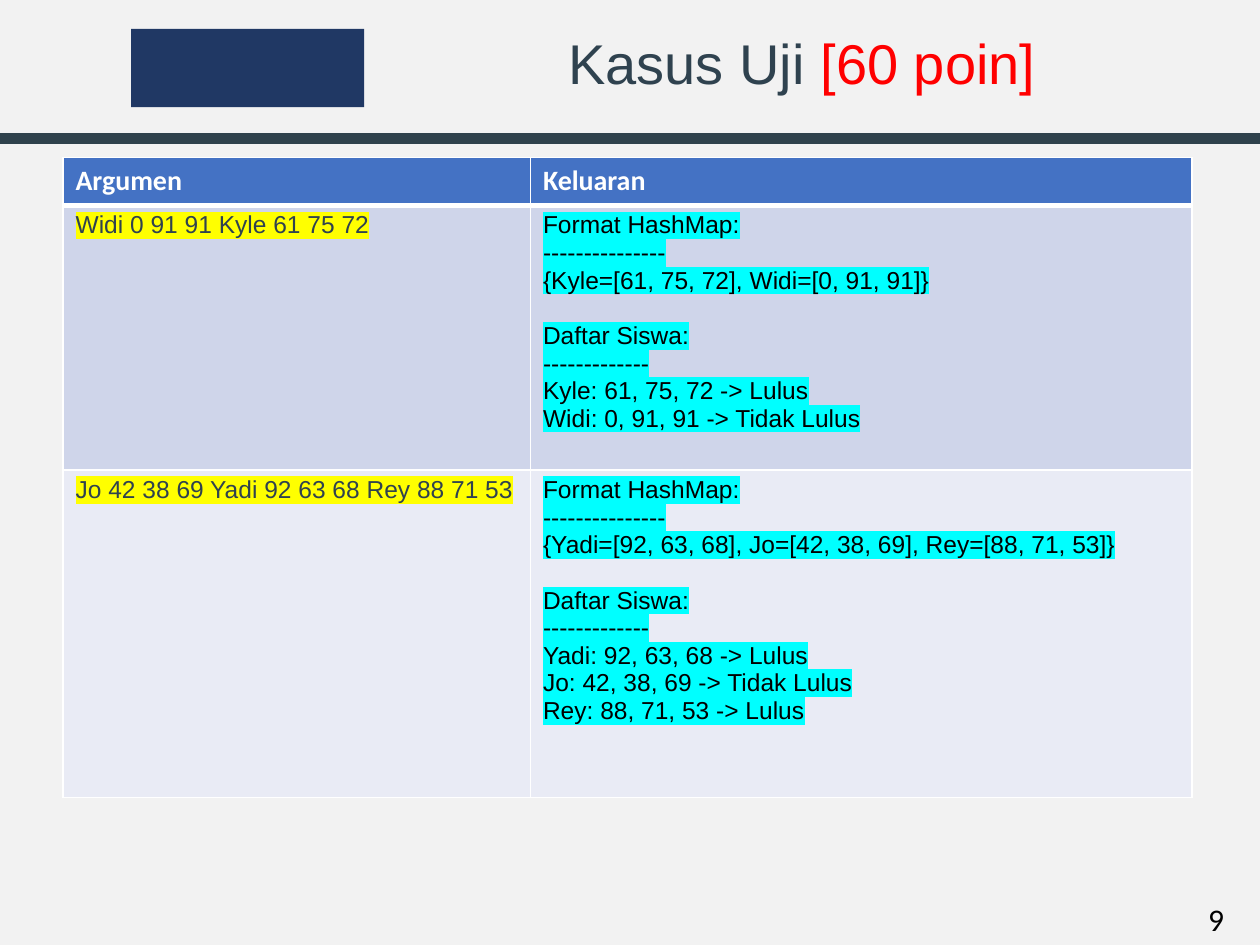
from lxml.etree import SubElement
from pptx import Presentation
from pptx.dml.color import RGBColor
from pptx.enum.shapes import MSO_CONNECTOR, MSO_SHAPE
from pptx.enum.text import MSO_ANCHOR, PP_ALIGN
from pptx.oxml import parse_xml
from pptx.oxml.ns import nsdecls, qn
from pptx.util import Inches, Pt

BACKGROUND = RGBColor(0xF2, 0xF2, 0xF2)
NAVY = RGBColor(0x20, 0x38, 0x64)
RULE = RGBColor(0x2F, 0x42, 0x4C)
SLATE = RGBColor(0x2F, 0x42, 0x4F)
RED = RGBColor(0xFF, 0x00, 0x00)
BLACK = RGBColor(0x00, 0x00, 0x00)
WHITE = RGBColor(0xFF, 0xFF, 0xFF)
HEADER_FILL = RGBColor(0x44, 0x72, 0xC4)
ROW_FILLS = [RGBColor(0xCF, 0xD5, 0xEA), RGBColor(0xE9, 0xEB, 0xF5)]
YELLOW = RGBColor(0xFF, 0xFF, 0x00)
CYAN = RGBColor(0x00, 0xFF, 0xFF)

# Content
TITLE = [("Kasus Uji ", SLATE), ("[60 poin]", RED)]
PAGE_NUMBER = "9"
HEADERS = ["Argumen", "Keluaran"]
STUDENT_HEADING = "Daftar Siswa:"
# Each case: argument, printed map, student results
CASES = [
    ("Widi 0 91 91 Kyle 61 75 72",
     "{Kyle=[61, 75, 72], Widi=[0, 91, 91]}",
     ["Kyle: 61, 75, 72 -> Lulus",
      "Widi: 0, 91, 91 -> Tidak Lulus"]),
    ("Jo 42 38 69 Yadi 92 63 68 Rey 88 71 53",
     "{Yadi=[92, 63, 68], Jo=[42, 38, 69], Rey=[88, 71, 53]}",
     ["Yadi: 92, 63, 68 -> Lulus",
      "Jo: 42, 38, 69 -> Tidak Lulus",
      "Rey: 88, 71, 53 -> Lulus"]),
]
COLUMN_WIDTHS = [3.71, 5.25]
ROW_HEIGHTS = [0.38, 2.1, 2.6]


def style(span, size, font, color, bold=False, highlight=None):
    span.font.size = Pt(size)
    span.font.name = font
    span.font.bold = bold
    span.font.color.rgb = color
    if highlight is not None:
        mark = parse_xml(f'<a:highlight {nsdecls("a")}>'
                         f'<a:srgbClr val="{highlight}"/></a:highlight>')
        span.font._element.find(qn("a:solidFill")).addnext(mark)


def fill_cell(cell, lines, fill, top, bottom, **look):
    cell.text_frame.text = "\n".join(lines)
    for para in cell.text_frame.paragraphs:
        if para.text == STUDENT_HEADING:
            para.space_before = Pt(16)
        style(para.runs[0], **look)
    cell.fill.solid()
    cell.fill.fore_color.rgb = fill
    # Border elements come before the fill
    sides = [("L", 1), ("R", 1), ("T", top), ("B", bottom)]
    for place, (side, points) in enumerate(sides):
        border = parse_xml(
            f'<a:ln{side} {nsdecls("a")} w="{Pt(points)}"><a:solidFill>'
            f'<a:srgbClr val="{WHITE}"/></a:solidFill></a:ln{side}>')
        cell._tc.get_or_add_tcPr().insert(place, border)


deck = Presentation()
deck.slide_width, deck.slide_height = Inches(10), Inches(7.5)
page = deck.slides.add_slide(deck.slide_layouts[6])
page.background.fill.solid()
page.background.fill.fore_color.rgb = BACKGROUND

# Page number
box = page.shapes.add_textbox(Inches(9.49), Inches(7.09),
                              Inches(0.5), Inches(0.4))
box.text_frame.word_wrap = False
box.text_frame.text = PAGE_NUMBER
style(box.text_frame.paragraphs[0].runs[0], 18, "Calibri", BLACK)

# Plain header block
block = page.shapes.add_shape(MSO_SHAPE.RECTANGLE, Inches(1.04), Inches(0.23),
                              Inches(1.85), Inches(0.62))
block.shadow.inherit = False
block.fill.solid()
block.fill.fore_color.rgb = NAVY
block.line.fill.background()

# Header rule
rule = page.shapes.add_connector(MSO_CONNECTOR.STRAIGHT, 0, Inches(1.1),
                                 Inches(10), Inches(1.1))
rule.line.color.rgb = RULE
rule.line.width = Pt(6)
SubElement(rule._element.spPr, qn("a:effectLst"))

# Title
box = page.shapes.add_textbox(Inches(3.24), Inches(0.23),
                              Inches(6.25), Inches(0.6))
box.text_frame.word_wrap = True
box.text_frame.vertical_anchor = MSO_ANCHOR.MIDDLE
para = box.text_frame.paragraphs[0]
para.alignment = PP_ALIGN.CENTER
para.line_spacing = 0.9
for text, color in TITLE:
    span = para.add_run()
    span.text = text
    style(span, 32, "Arial", color)

# Test case table
table = page.shapes.add_table(
    len(ROW_HEIGHTS), len(COLUMN_WIDTHS), Inches(0.5), Inches(1.25),
    Inches(sum(COLUMN_WIDTHS)), Inches(sum(ROW_HEIGHTS))).table
for column, width in zip(table.columns, COLUMN_WIDTHS):
    column.width = Inches(width)
for row, height in zip(table.rows, ROW_HEIGHTS):
    row.height = Inches(height)

for column, heading in enumerate(HEADERS):
    fill_cell(table.cell(0, column), [heading], HEADER_FILL, 1, 3,
              size=16, font="Calibri", color=WHITE, bold=True)
for row, (case, fill) in enumerate(zip(CASES, ROW_FILLS), start=1):
    argument, printed_map, results = case
    output = ["Format HashMap:", "-" * 15, printed_map,
              STUDENT_HEADING, "-" * 13, *results]
    top = 3 if row == 1 else 1
    fill_cell(table.cell(row, 0), [argument], fill, top, 1,
              size=14, font="Arial", color=SLATE, highlight=YELLOW)
    fill_cell(table.cell(row, 1), output, fill, top, 1,
              size=14, font="Arial", color=BLACK, highlight=CYAN)

deck.save("out.pptx")
